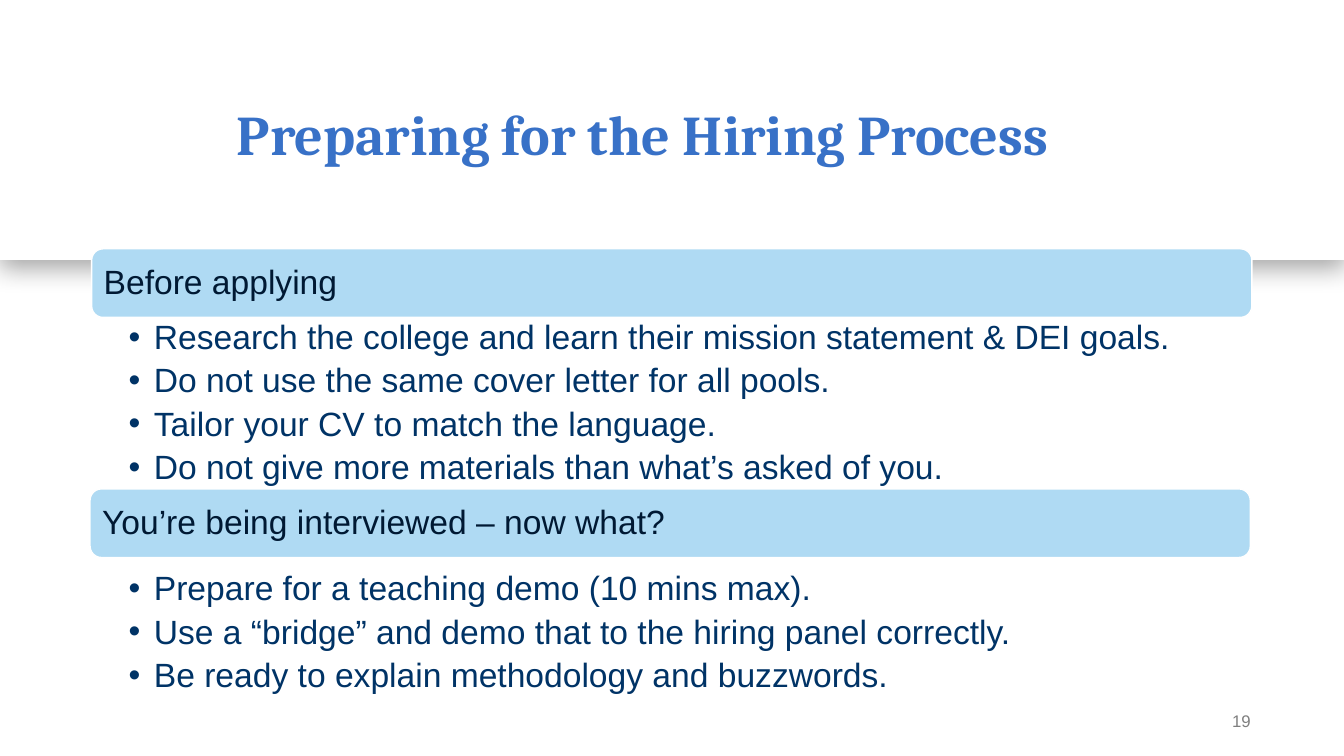
from dataclasses import dataclass

from lxml.etree import SubElement
from pptx import Presentation
from pptx.dml.color import RGBColor
from pptx.enum.shapes import MSO_SHAPE
from pptx.enum.text import MSO_ANCHOR, PP_ALIGN
from pptx.oxml.ns import qn
from pptx.util import Cm, Pt

WHITE = RGBColor(0xFF, 0xFF, 0xFF)
BLACK = RGBColor(0x00, 0x00, 0x00)
TITLE_BLUE = RGBColor(0x38, 0x71, 0xC7)
BAR_BLUE = RGBColor(0xAF, 0xDA, 0xF3)
HEADING_NAVY = RGBColor(0x00, 0x19, 0x33)
BULLET_NAVY = RGBColor(0x00, 0x33, 0x66)
GREY = RGBColor(0x7F, 0x7F, 0x7F)


@dataclass
class Section:
    heading: str
    bullets: list[str]
    bar_left: float
    bar_top: float
    list_top: float
    list_height: float


SECTION_WIDTH = 29.24
LIST_LEFT = 2.31
SECTIONS = [
    Section("Before applying", [
        "Research the college and learn their mission statement & DEI goals.",
        "Do not use the same cover letter for all pools.",
        "Tailor your CV to match the language.",
        "Do not give more materials than what’s asked of you.",
    ], 2.31, 6.27, 8.0, 4.47),
    Section("You’re being interviewed – now what?", [
        "Prepare for a teaching demo (10 mins max).",
        "Use a “bridge” and demo that to the hiring panel correctly.",
        "Be ready to explain methodology and buzzwords.",
    ], 2.27, 12.32, 14.33, 4.34),
]


def set_frame(frame, left: float, top: float, right: float, bottom: float, anchor) -> None:
    frame.word_wrap = True
    frame.margin_left, frame.margin_top = Cm(left), Cm(top)
    frame.margin_right, frame.margin_bottom = Cm(right), Cm(bottom)
    frame.vertical_anchor = anchor


def style(para, size: float, color: RGBColor, name: str = "Arial", bold: bool = False) -> None:
    for span in para.runs:
        span.font.name, span.font.size, span.font.bold = name, Pt(size), bold
        span.font.color.rgb = color


def add_bullet(para) -> None:
    properties = para._p.get_or_add_pPr()
    properties.set("marL", str(Cm(0.64)))
    properties.set("indent", str(-Cm(0.64)))
    SubElement(properties, qn("a:buFont"), typeface="Arial")
    SubElement(properties, qn("a:buChar"), char="•")


def add_band(page) -> None:
    band = page.shapes.add_shape(MSO_SHAPE.RECTANGLE, 0, 0, Cm(33.87), Cm(6.55))
    band.fill.solid()
    band.fill.fore_color.rgb = WHITE
    band.line.fill.background()
    band.shadow.inherit = False
    effects = band._element.spPr.find(qn("a:effectLst"))
    shadow = SubElement(effects, qn("a:outerShdw"), blurRad=str(Pt(18)), dist=str(Pt(5)),
                        dir="5400000", algn="t", rotWithShape="0")
    color = SubElement(shadow, qn("a:srgbClr"), val=str(BLACK))
    SubElement(color, qn("a:alpha"), val="35000")


def add_section(page, section: Section) -> None:
    # Heading bar
    bar = page.shapes.add_shape(MSO_SHAPE.ROUNDED_RECTANGLE, Cm(section.bar_left),
                                Cm(section.bar_top), Cm(SECTION_WIDTH), Cm(1.73))
    bar.fill.solid()
    bar.fill.fore_color.rgb = BAR_BLUE
    bar.line.color.rgb = WHITE
    bar.line.width = Pt(1)
    bar.shadow.inherit = False
    set_frame(bar.text_frame, 0.22, 0.23, 0.22, 0.23, MSO_ANCHOR.MIDDLE)
    bar.text_frame.text = section.heading
    para = bar.text_frame.paragraphs[0]
    para.alignment = PP_ALIGN.LEFT
    para.line_spacing = 0.9
    style(para, 24, HEADING_NAVY)

    # Bullet list
    box = page.shapes.add_textbox(Cm(LIST_LEFT), Cm(section.list_top),
                                  Cm(SECTION_WIDTH), Cm(section.list_height))
    set_frame(box.text_frame, 0.93, 0.08, 0.41, 0.08, MSO_ANCHOR.TOP)
    box.text_frame.text = "\n".join(section.bullets)
    for index, para in enumerate(box.text_frame.paragraphs):
        add_bullet(para)
        para.line_spacing = 0.9
        if index:
            para.space_before = Pt(5)
        style(para, 24, BULLET_NAVY)


def main() -> None:
    deck = Presentation()
    deck.slide_width, deck.slide_height = Cm(33.87), Cm(19.05)
    page = deck.slides.add_slide(deck.slide_layouts[6])
    add_band(page)

    # Title
    title = page.shapes.add_textbox(Cm(5.72), Cm(1.12), Cm(25.83), Cm(4.67))
    set_frame(title.text_frame, 0.25, 0.13, 0.25, 0.13, MSO_ANCHOR.MIDDLE)
    title.text_frame.text = "Preparing for the Hiring Process"
    para = title.text_frame.paragraphs[0]
    para.line_spacing = 0.9
    style(para, 40, TITLE_BLUE, "Cambria", True)

    # Page number
    number = page.shapes.add_textbox(Cm(28.98), Cm(17.65), Cm(2.54), Cm(1.02))
    set_frame(number.text_frame, 0.25, 0.13, 0, 0.13, MSO_ANCHOR.MIDDLE)
    number.text_frame.text = "19"
    para = number.text_frame.paragraphs[0]
    para.alignment = PP_ALIGN.RIGHT
    style(para, 12, GREY)

    for section in SECTIONS:
        add_section(page, section)
    deck.save("out.pptx")


if __name__ == "__main__":
    main()
